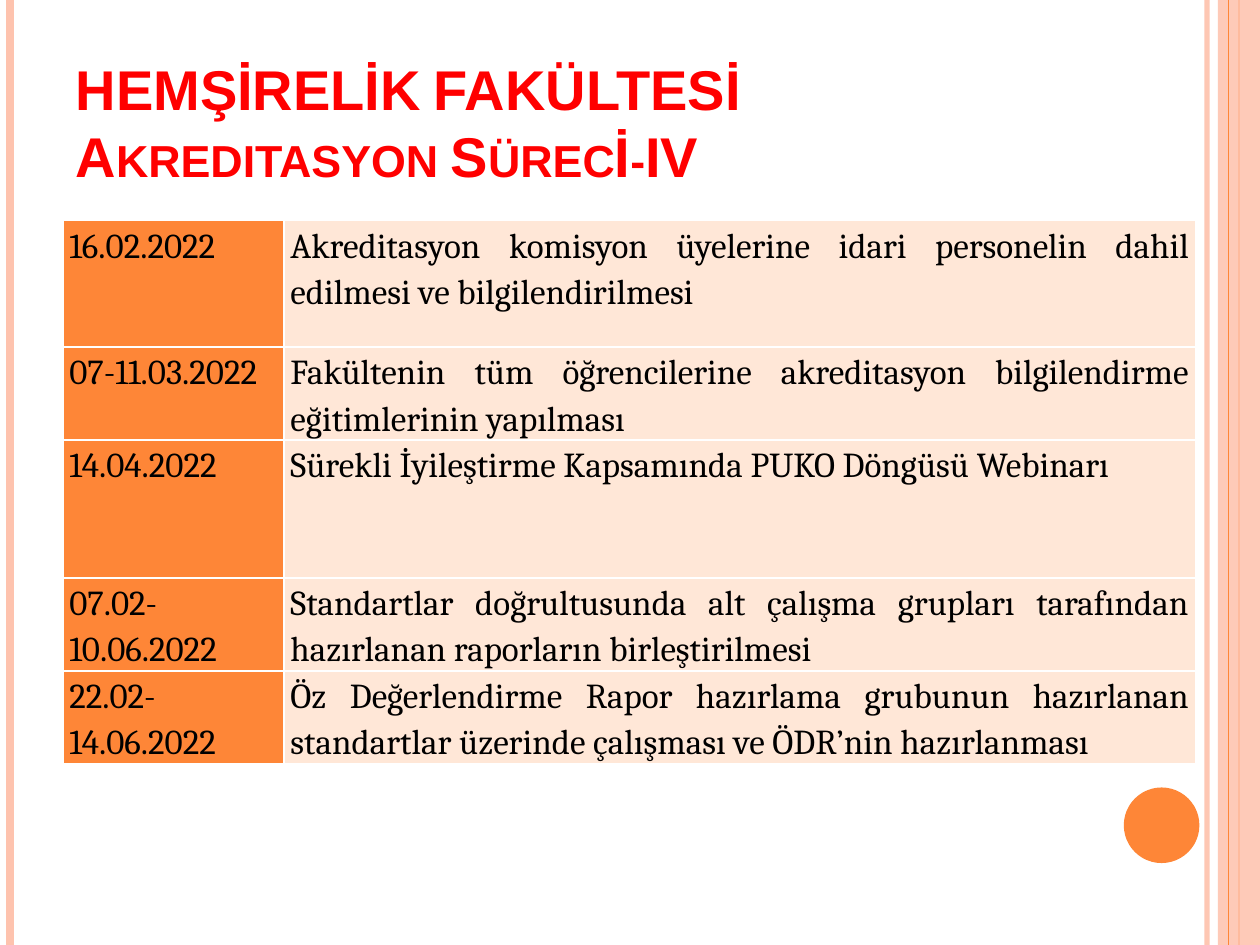
"""Build the accreditation timeline slide with its striped side borders."""
from lxml import etree
from pptx import Presentation
from pptx import util as u
from pptx.dml.color import RGBColor
from pptx.enum import shapes, text
from pptx.oxml.ns import qn

ORANGE = RGBColor(0xFE, 0x86, 0x37)
PEACH = RGBColor(0xFE, 0xC3, 0xAE)
CREAM = RGBColor(0xFF, 0xE7, 0xD7)
RED = RGBColor(0xFF, 0, 0)
BLACK = RGBColor(0, 0, 0)
WHITE = RGBColor(0xFF, 0xFF, 0xFF)

WIDTH, HEIGHT = 720, 540
TITLE = ["HEMŞİRELİK FAKÜLTESİ", "Akreditasyon Sürecİ-IV"]
TIMELINE = [
    ("16.02.2022", "Akreditasyon komisyon üyelerine idari personelin dahil edilmesi ve bilgilendirilmesi", 72.4),
    ("07-11.03.2022", "Fakültenin tüm öğrencilerine akreditasyon bilgilendirme eğitimlerinin yapılması", 52.8),
    ("14.04.2022", "Sürekli İyileştirme Kapsamında PUKO Döngüsü Webinarı", 79),
    ("07.02-10.06.2022", "Standartlar doğrultusunda alt çalışma grupları tarafından hazırlanan raporların birleştirilmesi", 52.8),
    ("22.02-14.06.2022", "Öz Değerlendirme Rapor hazırlama grubunun hazırlanan standartlar üzerinde çalışması ve ÖDR’nin hazırlanması", 52.8),
]
COLUMNS = [(126.4, ORANGE), (520.8, CREAM)]
STRIPES_BEHIND = [(689.8, PEACH, 3, 93), (5.8, PEACH, 4.5, 100), (708, ORANGE, 1.5, 100)]
STRIPE_FRONT = (702, ORANGE, 0.75, 100)


def set_alpha(element, percent):
    color = element.find(".//" + qn("a:srgbClr"))
    etree.SubElement(color, qn("a:alpha"), val=str(percent * 1000))


def add_stripe(page, x, color, weight, opacity):
    stripe = page.shapes.add_connector(
        shapes.MSO_CONNECTOR.STRAIGHT, u.Pt(x), u.Pt(0), u.Pt(x), u.Pt(HEIGHT))
    stripe.line.color.rgb = color
    stripe.line.width = u.Pt(weight)
    properties = stripe.element.spPr
    if opacity < 100:
        set_alpha(properties, opacity)
    etree.SubElement(properties, qn("a:effectLst"))


def add_solid(page, kind, left, top, width, height, color):
    solid = page.shapes.add_shape(kind, u.Pt(left), u.Pt(top), u.Pt(width), u.Pt(height))
    solid.shadow.inherit = False
    solid.fill.solid()
    solid.fill.fore_color.rgb = color
    solid.line.fill.background()
    return solid


def add_decoration(page):
    for stripe in STRIPES_BEHIND:
        add_stripe(page, *stripe)
    band = add_solid(page, shapes.MSO_SHAPE.RECTANGLE, 696, 0, WIDTH - 696, HEIGHT, PEACH)
    set_alpha(band.element.spPr, 87)
    add_stripe(page, *STRIPE_FRONT)
    add_solid(page, shapes.MSO_SHAPE.OVAL, 642.2, 450, 43.2, 43.2, ORANGE)


def style_span(span, name, size, color):
    span.font.name = name
    span.font.size = u.Pt(size)
    span.font.color.rgb = color


def fill_title(box):
    box.left, box.top, box.width, box.height = (u.Pt(v) for v in (36, 21.6, 588, 90))
    frame = box.text_frame
    frame.word_wrap = True
    frame.auto_size = text.MSO_AUTO_SIZE.NONE
    frame.vertical_anchor = text.MSO_ANCHOR.BOTTOM
    para = frame.paragraphs[0]
    para.alignment = text.PP_ALIGN.LEFT
    for index, line in enumerate(TITLE):
        if index:
            para.add_line_break()
        span = para.add_run()
        span.text = line
        style_span(span, "Arial", 32, RED)
        span.font.bold = True
        span.font._element.set("cap", "small")


def add_borders(cell):
    properties = cell._tc.get_or_add_tcPr()
    for index, side in enumerate(("a:lnL", "a:lnR", "a:lnT", "a:lnB")):
        border = etree.Element(qn(side), w=str(u.Pt(1)))
        fill = etree.SubElement(border, qn("a:solidFill"))
        etree.SubElement(fill, qn("a:srgbClr"), val=str(WHITE))
        properties.insert(index, border)


def fill_cell(cell, words, color):
    cell.fill.solid()
    cell.fill.fore_color.rgb = color
    cell.margin_left = cell.margin_right = u.Pt(3.6)
    cell.margin_top = cell.margin_bottom = u.Pt(0)
    para = cell.text_frame.paragraphs[0]
    para.alignment = text.PP_ALIGN.JUSTIFY
    para.line_spacing = 1.15
    para.space_after = u.Pt(10)
    span = para.add_run()
    span.text = words
    style_span(span, "Cambria", 20, BLACK)
    add_borders(cell)


def add_timeline(page):
    width = sum(column[0] for column in COLUMNS)
    height = sum(row[-1] for row in TIMELINE)
    table = page.shapes.add_table(
        len(TIMELINE), len(COLUMNS), u.Pt(36), u.Pt(126), u.Pt(width), u.Pt(height)).table
    table.first_row = table.horz_banding = False
    for column, (size, _) in zip(table.columns, COLUMNS):
        column.width = u.Pt(size)
    for row, (date, task, size) in zip(table.rows, TIMELINE):
        row.height = u.Pt(size)
        for cell, words, (_, color) in zip(row.cells, (date, task), COLUMNS):
            fill_cell(cell, words, color)


def main():
    deck = Presentation()
    deck.slide_width, deck.slide_height = u.Pt(WIDTH), u.Pt(HEIGHT)
    page = deck.slides.add_slide(deck.slide_layouts[5])
    add_decoration(page)
    fill_title(page.shapes.title)
    add_timeline(page)
    deck.save("out.pptx")


if __name__ == "__main__":
    main()
